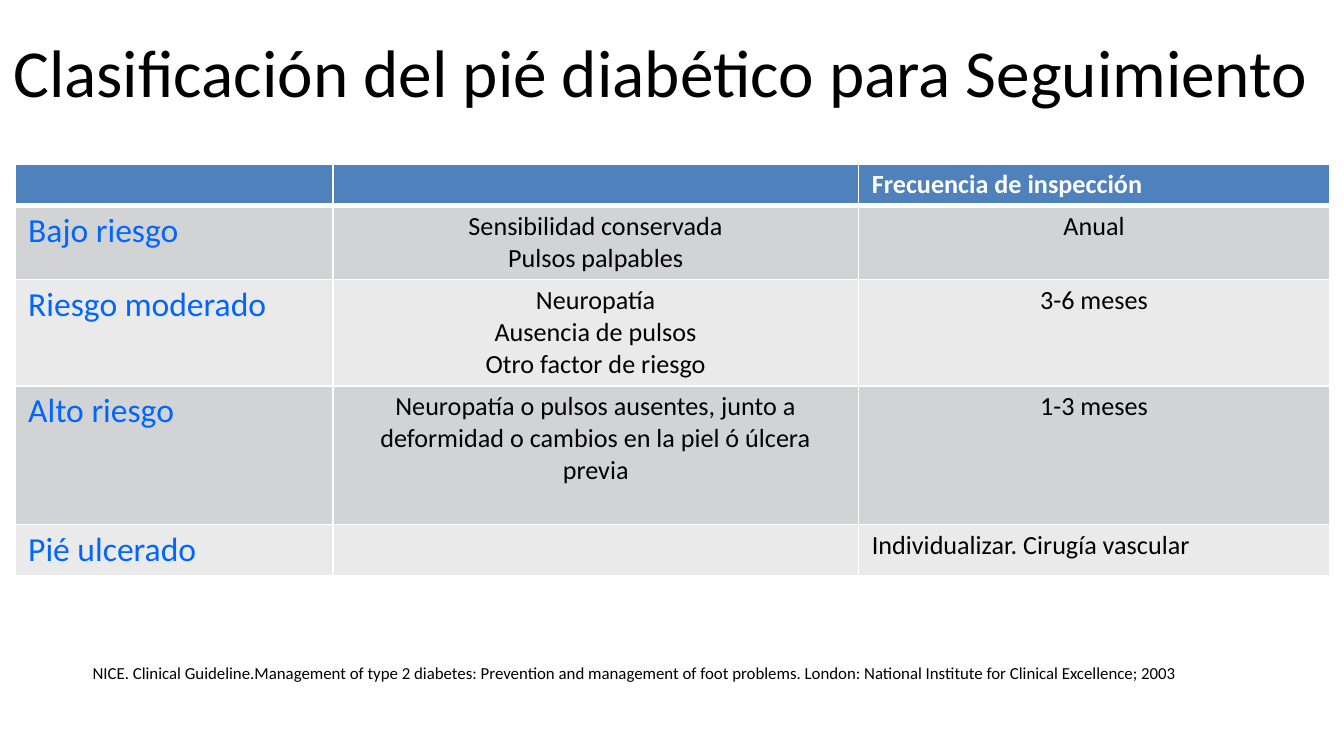
from lxml import etree
from pptx import Presentation
from pptx.dml.color import RGBColor
from pptx.enum.text import PP_ALIGN
from pptx.oxml.ns import qn
from pptx.util import Pt

LEFT, MID = PP_ALIGN.LEFT, PP_ALIGN.CENTER
BLACK = RGBColor(0x00, 0x00, 0x00)
WHITE = RGBColor(0xFF, 0xFF, 0xFF)
BLUE = RGBColor(0x4F, 0x81, 0xBD)
LINK = RGBColor(0x00, 0x66, 0xFF)
DARK = RGBColor(0xD2, 0xD3, 0xD5)
LIGHT = RGBColor(0xEA, 0xEA, 0xEB)
FONT = "Calibri"

COLS = [170.5, 281.5, 252.5]
ROWS = [22.3, 39.6, 56.9, 74.2, 27.4]
CELLS = [
    ["", "", "Frecuencia de inspección"],
    ["Bajo riesgo", "Sensibilidad conservada\nPulsos palpables", "Anual"],
    ["Riesgo moderado",
     "Neuropatía\nAusencia de pulsos\nOtro factor de riesgo", "3-6 meses"],
    ["Alto riesgo",
     "Neuropatía o pulsos ausentes, junto a deformidad o cambios en la piel "
     "ó úlcera previa", "1-3 meses"],
    ["Pié ulcerado", "", "Individualizar. Cirugía vascular"],
]
TITLE = "Clasificación del pié diabético para Seguimiento"
SOURCE = ("NICE. Clinical Guideline.Management of type 2 diabetes: Prevention "
          "and management of foot problems. London: National Institute for "
          "Clinical Excellence; 2003")


def write(frame, text, size, color, bold=False, align=LEFT):
    frame.text = text
    for para in frame.paragraphs:
        para.alignment = align
        font = para.font
        font.name, font.size, font.bold = FONT, Pt(size), bold
        font.color.rgb = color
        if not text:  # keeps an empty cell from stretching its row
            end = etree.SubElement(para._p, qn("a:endParaRPr"))
            end.set("sz", str(size * 100))


def add_text(slide, box, text, size, top=3.6):
    shape = slide.shapes.add_textbox(*map(Pt, box))
    frame = shape.text_frame
    frame.word_wrap = True
    frame.margin_top = Pt(top)
    write(frame, text, size, BLACK)


def rule(cell, side, width):
    line = etree.SubElement(cell._tc.get_or_add_tcPr(), qn("a:ln" + side))
    line.set("w", str(Pt(width)))
    fill = etree.SubElement(line, qn("a:solidFill"))
    etree.SubElement(fill, qn("a:srgbClr")).set("val", str(WHITE))


def style(cell, row, col, text):
    cell.margin_left = cell.margin_right = Pt(7.2)
    cell.margin_top = cell.margin_bottom = Pt(2.7)
    # Borders, heavier under the header
    for side in "LRTB":
        heavy = (row, side) in ((0, "B"), (1, "T"))
        rule(cell, side, 3 if heavy else 1)
    # Banded fill
    cell.fill.solid()
    cell.fill.fore_color.rgb = BLUE if row == 0 else DARK if row % 2 else LIGHT
    # Text
    if row == 0:
        write(cell.text_frame, text, 14, WHITE, bold=True)
    elif col == 0:
        write(cell.text_frame, text, 18, LINK)
    else:
        last = row == len(ROWS) - 1
        write(cell.text_frame, text, 14, BLACK, align=LEFT if last else MID)


def add_grid(slide, left, top):
    box = map(Pt, (left, top, sum(COLS), sum(ROWS)))
    table = slide.shapes.add_table(len(ROWS), len(COLS), *box).table
    for col, width in zip(table.columns, COLS):
        col.width = Pt(width)
    for row, height in zip(table.rows, ROWS):
        row.height = Pt(height)
    for r, texts in enumerate(CELLS):
        for c, text in enumerate(texts):
            style(table.cell(r, c), r, c, text)


def main():
    deck = Presentation()
    deck.slide_width, deck.slide_height = Pt(720), Pt(405)
    slide = deck.slides.add_slide(deck.slide_layouts[6])
    # Risk table, title and source line
    add_grid(slide, 7.9, 87.8)
    add_text(slide, (0, 10.8, 838.8, 92.2), TITLE, 36, top=5.5)
    add_text(slide, (42.5, 351.4, 663, 18), SOURCE, 9)
    deck.save("out.pptx")


if __name__ == "__main__":
    main()
